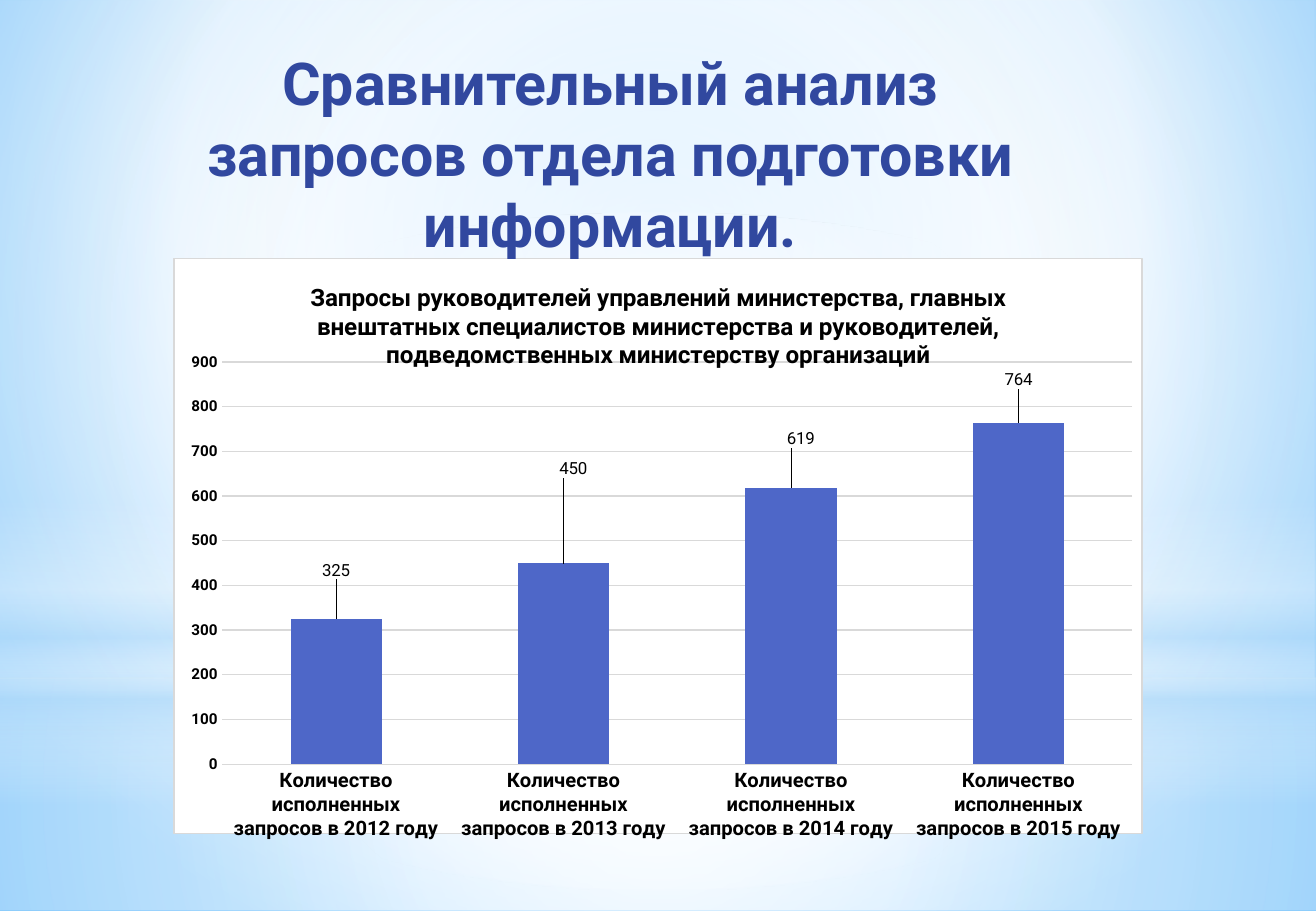
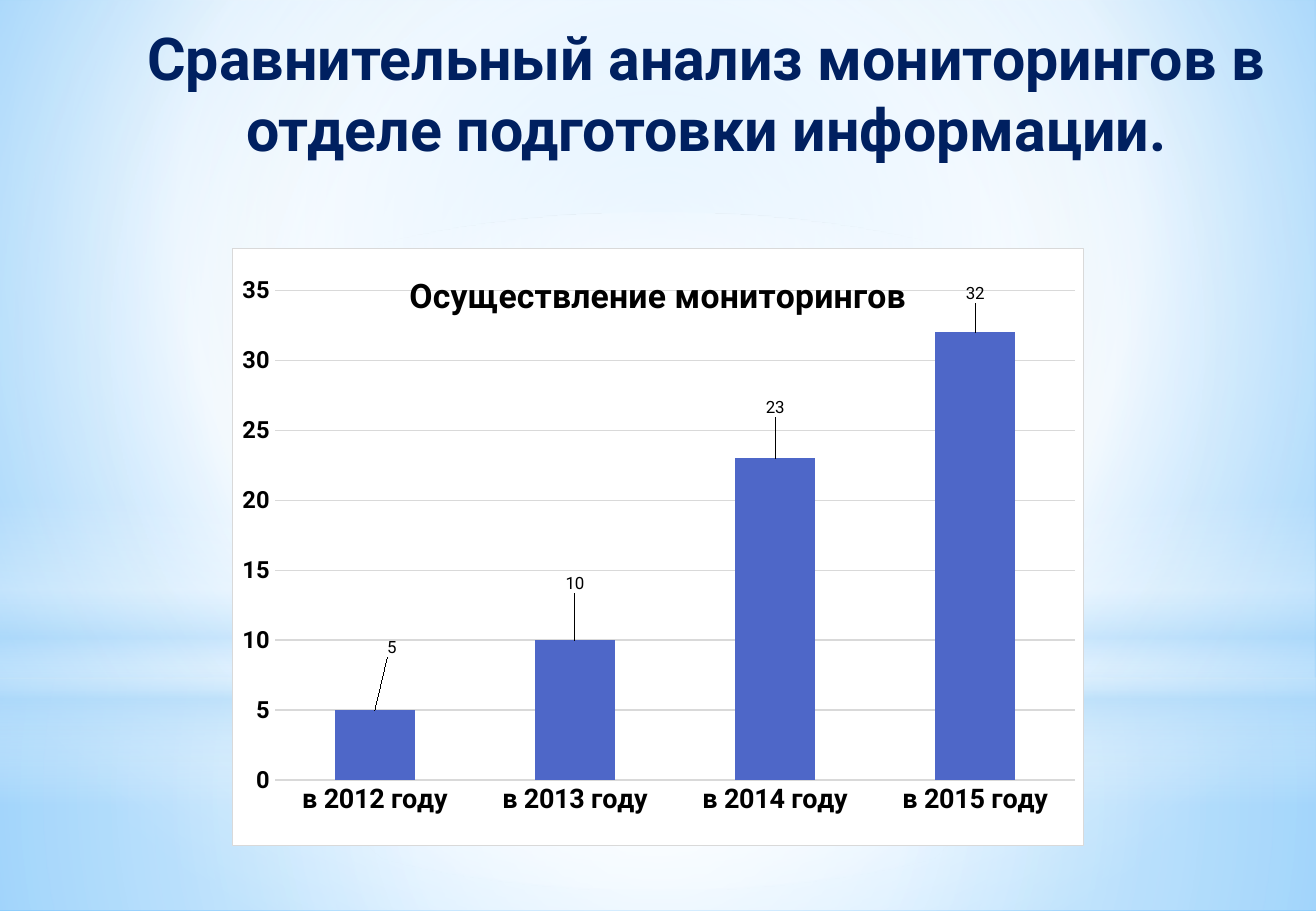
from dataclasses import dataclass
from typing import Any

from lxml.etree import SubElement
from pptx import Presentation
from pptx.chart.data import CategoryChartData
from pptx.dml.color import RGBColor
from pptx.enum.chart import XL_CHART_TYPE, XL_LABEL_POSITION, XL_TICK_MARK
from pptx.enum.shapes import MSO_SHAPE
from pptx.enum.text import MSO_ANCHOR, MSO_AUTO_SIZE, PP_ALIGN
from pptx.oxml import parse_xml
from pptx.oxml.ns import nsdecls, qn
from pptx.util import Emu, Pt

PX = 9525
WIDE, HIGH = 1040, 720
FACE = "Roboto"
WHITE = RGBColor(0xFF, 0xFF, 0xFF)
BLACK = RGBColor(0, 0, 0)
GREY = RGBColor(0xD9, 0xD9, 0xD9)
BLUE = RGBColor(0x4E, 0x67, 0xC8)
ROYAL = RGBColor(0x31, 0x48, 0x9F)
NAVY = RGBColor(0x00, 0x20, 0x60)
PALE = RGBColor(0xB4, 0xDC, 0xFA)
SKY = RGBColor(0x9E, 0xD5, 0xFF)
DEEP = RGBColor(0x5B, 0xB9, 0xFF)

Box = tuple[int, int, int, int]
Stop = tuple[int, RGBColor, int]
MID = (50, 50, 50, 50)
BACK = [(0, SKY, 100), (60, WHITE, 100), (100, DEEP, 100)]


@dataclass
class Glow:
    box: Box
    form: MSO_SHAPE
    stops: list[Stop]
    focus: Box | None = MID


@dataclass
class Page:
    title: str
    tint: RGBColor
    box: Box
    frame: Box
    head: str
    name: str
    cats: list[str]
    vals: list[int]
    top: int
    step: int
    sizes: tuple[float, int, int]
    plot: tuple[float, float, float, float]
    shifts: list[tuple[float, float]]


GLOWS = [
    Glow((0, 536, WIDE, 184), MSO_SHAPE.RECTANGLE,
         [(0, WHITE, 91), (37, WHITE, 76), (100, PALE, 79)]),
    Glow((0, 0, WIDE, 536), MSO_SHAPE.RECTANGLE,
         [(0, WHITE, 89), (48, WHITE, 62), (100, PALE, 79)]),
    Glow((0, 396, WIDE, 240), MSO_SHAPE.RECTANGLE,
         [(0, WHITE, 0), (29, WHITE, 30), (45, PALE, 40),
          (55, WHITE, 26), (65, PALE, 60), (100, WHITE, 0)], None),
    Glow((0, 168, WIDE, 536), MSO_SHAPE.OVAL,
         [(0, WHITE, 100), (56, WHITE, 0)]),
]
YEARS = range(2012, 2016)
PAGES = [
    Page("Сравнительный анализ запросов отдела подготовки информации.", ROYAL,
         (112, 32, 741, 120), (137, 204, 766, 460),
         "Запросы руководителей управлений министерства, главных внештатных "
         "специалистов министерства и руководителей, подведомственных "
         "министерству организаций", "Series 1",
         [f"Количество исполненных запросов в {year} году" for year in YEARS],
         [325, 450, 619, 764], 900, 100, (14.4, 12, 9),
         (0.05, 0.18, 0.94, 0.7),
         [(0, -0.06), (0.01, -0.14), (0.01, -0.06), (0, -0.05)]),
    Page("Сравнительный анализ мониторингов в отделе подготовки информации.",
         NAVY, (89, 12, 939, 156), (183, 196, 674, 473),
         "Осуществление мониторингов", "Осуществление мониторингов",
         [f"в {year} году" for year in YEARS],
         [5, 10, 23, 32], 35, 5, (20, 16, 14),
         (0.05, 0.07, 0.94, 0.82),
         [(0.02, -0.08), (0, -0.07), (0, -0.06), (0, -0.04)]),
]


def put(thing: Any, **vals: Any) -> None:
    for key, val in vals.items():
        setattr(thing, key, val)


def place(box: Box) -> list[Emu]:
    return [Emu(n * PX) for n in box]


def style(font: Any, size: float, bold: bool, tint: RGBColor = BLACK) -> None:
    put(font, size=Pt(size), bold=bold, name=FACE)
    font.color.rgb = tint


def blend(old: Any, stops: list[Stop], focus: Box | None) -> None:
    grad = parse_xml(f'<a:gradFill {nsdecls("a")} rotWithShape="1"/>')
    row = SubElement(grad, qn("a:gsLst"))
    for pos, tint, alpha in stops:
        stop = SubElement(row, qn("a:gs"), pos=str(pos * 1000))
        clr = SubElement(stop, qn("a:srgbClr"), val=str(tint))
        if alpha < 100:
            SubElement(clr, qn("a:alpha"), val=str(alpha * 1000))
    if focus:
        way = SubElement(grad, qn("a:path"), {"path": "circle"})
        edge = {key: str(n * 1000) for key, n in zip("ltrb", focus)}
        SubElement(way, qn("a:fillToRect"), edge)
    else:
        SubElement(grad, qn("a:lin"), ang="5400000", scaled="0")
    old.getparent().replace(old, grad)


def dress(master: Any, slide: Any) -> None:
    master.background.fill.solid()
    blend(master.element.xpath("./p:cSld/p:bg//a:solidFill")[0],
          BACK, (20, 10, 20, 60))
    for num, glow in enumerate(GLOWS):
        shape = slide.shapes.add_shape(glow.form, *place(glow.box))
        shape.shadow.inherit = False
        shape.line.fill.background()
        shape.fill.solid()
        node = shape.element
        blend(node.xpath("./p:spPr/a:solidFill")[0], glow.stops, glow.focus)
        node.xpath(".//p:cNvPr")[0].set("id", str(20 + num))
        master.shapes.element.insert(2 + num, node)


def layout(**vals: Any) -> Any:
    root = parse_xml(f'<c:layout {nsdecls("c")}><c:manualLayout/></c:layout>')
    for key, val in vals.items():
        SubElement(root[0], qn(f"c:{key}"), val=str(val))
    return root


def edge(chart: Any) -> None:
    space = chart.element
    for node in space.findall(qn("c:roundedCorners")):
        space.remove(node)
    space.find(qn("c:date1904")).addnext(
        parse_xml(f'<c:roundedCorners {nsdecls("c")} val="0"/>'))
    space.find(qn("c:chart")).addnext(parse_xml(
        f'<c:spPr {nsdecls("c", "a")}>'
        f'<a:solidFill><a:srgbClr val="{WHITE}"/></a:solidFill>'
        f'<a:ln w="{Pt(0.75)}"><a:solidFill><a:srgbClr val="{GREY}"/>'
        '</a:solidFill></a:ln></c:spPr>'))


def draw(slide: Any, page: Page) -> None:
    data = CategoryChartData()
    data.categories = page.cats
    data.add_series(page.name, page.vals)
    chart = slide.shapes.add_chart(
        XL_CHART_TYPE.COLUMN_CLUSTERED, *place(page.frame), data).chart
    put(chart, has_legend=False, has_title=True)
    style(chart.font, 10, False)
    edge(chart)
    big, *small = page.sizes
    head = chart.chart_title.text_frame
    head.text = page.head
    style(head.paragraphs[0].runs[0].font, big, True)
    chart.chart_title.include_in_layout = False

    for axis, size in zip((chart.category_axis, chart.value_axis), small):
        put(axis, major_tick_mark=XL_TICK_MARK.NONE,
            minor_tick_mark=XL_TICK_MARK.NONE)
        axis.format.line.fill.background()
        style(axis.tick_labels.font, size, True)
    put(chart.value_axis, minimum_scale=0, maximum_scale=page.top,
        major_unit=page.step, has_major_gridlines=True)
    line = chart.value_axis.major_gridlines.format.line
    line.width = Pt(0.75)
    line.color.rgb = GREY

    area = chart.element.xpath(".//c:plotArea")[0]
    for node in area.findall(qn("c:layout")):
        area.remove(node)
    area.insert(0, layout(layoutTarget="inner", xMode="edge", yMode="edge",
                          **dict(zip("xywh", page.plot))))

    plot = chart.plots[0]
    put(plot, gap_width=150, vary_by_categories=False)
    bars = plot.series[0]
    bars.format.fill.solid()
    bars.format.fill.fore_color.rgb = BLUE
    put(bars.data_labels, show_value=True,
        position=XL_LABEL_POSITION.OUTSIDE_END)
    for num in range(len(page.vals)):
        bars.points[num].data_label.position = XL_LABEL_POSITION.OUTSIDE_END
    for node, (x, y) in zip(chart.element.xpath(".//c:dLbl"), page.shifts):
        node.insert(1, layout(x=x, y=y))


def label(slide: Any, page: Page) -> None:
    title = slide.shapes.title
    put(title, **dict(zip(("left", "top", "width", "height"),
                          place(page.box))))
    frame = title.text_frame
    frame.text = page.title
    put(frame, word_wrap=True, auto_size=MSO_AUTO_SIZE.NONE,
        vertical_anchor=MSO_ANCHOR.TOP)
    para = frame.paragraphs[0]
    para.alignment = PP_ALIGN.CENTER
    style(para.runs[0].font, 35, True, page.tint)
    slide.shapes.element.append(title.element)


def main() -> None:
    deck = Presentation()
    put(deck, slide_width=Emu(WIDE * PX), slide_height=Emu(HIGH * PX))
    for page in PAGES:
        slide = deck.slides.add_slide(deck.slide_layouts[5])
        draw(slide, page)
        label(slide, page)
    dress(deck.slide_master, deck.slides[0])
    deck.save("out.pptx")


if __name__ == "__main__":
    main()
